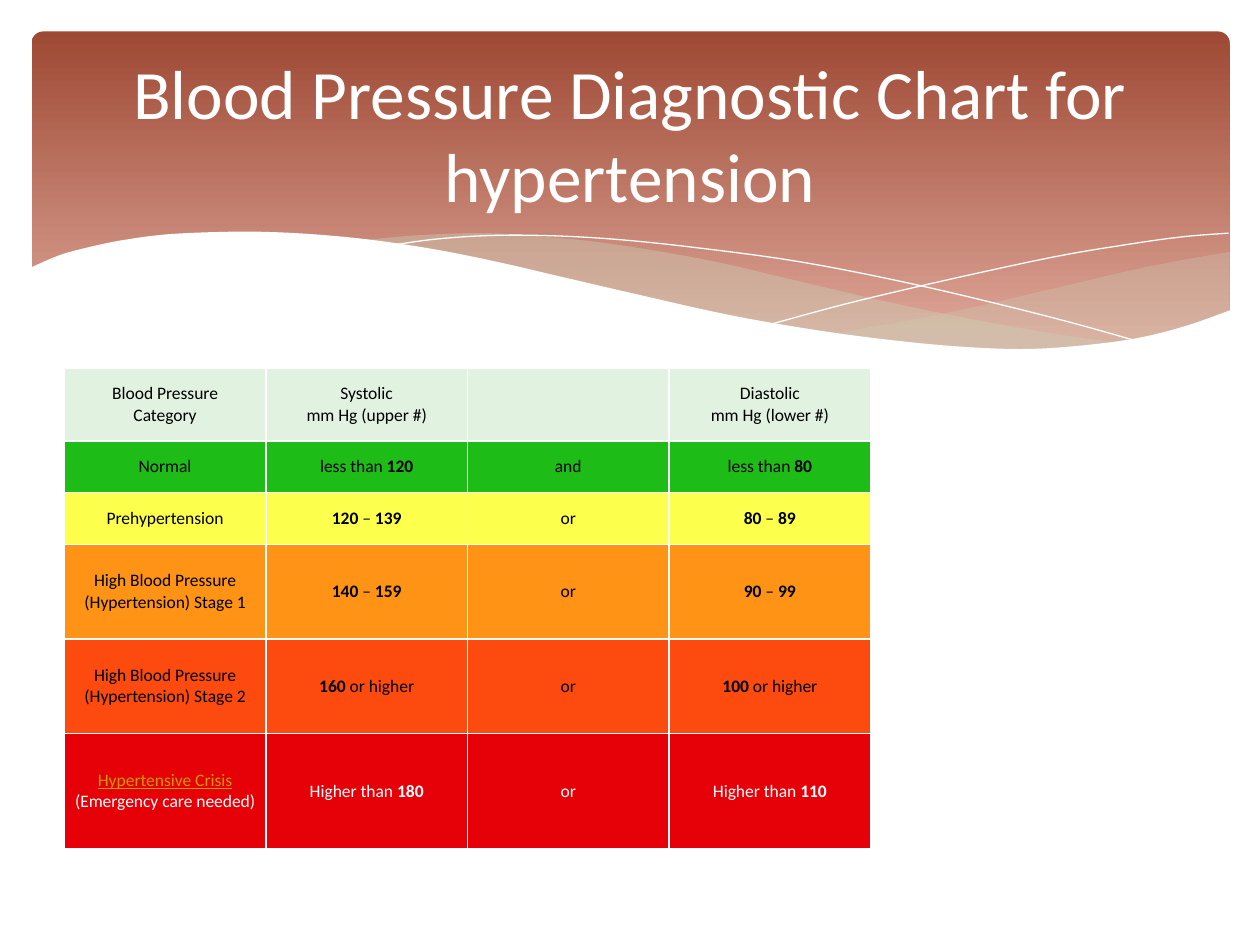
from lxml.etree import SubElement
from pptx import Presentation
from pptx.dml.color import RGBColor
from pptx.enum.shapes import MSO_SHAPE
from pptx.enum.text import MSO_ANCHOR, PP_ALIGN
from pptx.oxml.ns import qn
from pptx.util import Inches, Pt

FONT = "Calibri"
COLUMN_WIDTH = 1.6
ROW_HEIGHTS = [0.58, 0.41, 0.41, 0.75, 0.75, 0.92]
ROW_FILLS = ["E1F2E0", "1EBC16", "FCFF4C", "FF9315", "FD4A0E", "E60008"]
ROW_INKS = ["000000"] * 5 + ["FFFFFF"]
LINK_INK = "CC9900"
READINGS = [
    ["Blood Pressure\nCategory", "Systolic\nmm Hg (upper #)", "", "Diastolic\nmm Hg (lower #)"],
    ["Normal", "less than *120*", "and", "less than *80*"],
    ["Prehypertension", "*120* – *139*", "or", "*80* – *89*"],
    ["High Blood Pressure\n(Hypertension) Stage 1", "*140* – *159*", "or", "*90* – *99*"],
    ["High Blood Pressure\n(Hypertension) Stage 2", "*160* or higher", "or", "*100* or higher"],
    ["_Hypertensive Crisis\n(Emergency care needed)", "Higher than *180*", "or", "Higher than *110*"],
]

RIGHT_RIPPLE = [
    [(9.76, 2), (9.35, 2.07), (8.91, 2.16), (8.32, 2.3), (7.53, 2.48), (6.61, 2.65)],
    [(6.61, 2.65), (7.05, 2.71), (7.57, 2.76), (8.03, 2.78), (8.54, 2.76),
     (8.97, 2.7), (9.35, 2.62), (9.76, 2.47)],
]
LONG_RIPPLE = [
    [(8.93, 2.73), (8.37, 2.65), (7.75, 2.54), (7.06, 2.4), (6.29, 2.22), (5.69, 2.08),
     (5.14, 1.98), (4.65, 1.91), (4.2, 1.87), (3.8, 1.85), (3.28, 1.87), (2.86, 1.91)],
    [(2.86, 1.91), (3.42, 1.99), (4.04, 2.11), (4.49, 2.22), (5.3, 2.4), (6.01, 2.55),
     (6.65, 2.66), (7.22, 2.74), (7.73, 2.77), (8.18, 2.78), (8.57, 2.77), (8.93, 2.73)],
]
FALLING_LINE = [(3.09, 1.95), (3.44, 1.9), (3.87, 1.87), (4.33, 1.87), (4.89, 1.9), (5.56, 1.97),
                (6.36, 2.08), (7.27, 2.26), (8.31, 2.51), (9.07, 2.72)]
RISING_LINE = [(6.13, 2.57), (6.72, 2.41), (7.48, 2.23), (8.36, 2.04),
               (8.95, 1.94), (9.38, 1.88), (9.75, 1.85)]
WHITE_WAVE = [
    [(9.77, 2.46), (9.4, 2.59), (8.99, 2.69), (8.5, 2.75), (8.09, 2.77), (7.61, 2.75),
     (7.08, 2.7), (6.48, 2.62), (5.79, 2.5), (5.03, 2.33), (4.47, 2.2), (3.91, 2.07),
     (3.4, 1.97), (2.92, 1.9), (2.5, 1.86), (2.11, 1.84), (1.77, 1.84), (1.32, 1.86),
     (0.95, 1.91), (0.67, 1.97), (0.46, 2.03), (0.23, 2.13)],
    [(0.23, 3.29), (9.77, 3.29)],
]


def rgb(code):
    """Turn a hex string into a colour."""
    return RGBColor.from_string(code)


def smooth(knots, steps=5):
    """Return points on a Catmull-Rom curve through the knots."""
    if len(knots) < 3:
        return knots
    padded = [knots[0], *knots, knots[-1]]
    points = [knots[0]]
    for a, b, c, d in zip(padded, padded[1:], padded[2:], padded[3:]):
        for step in range(1, steps + 1):
            t = step / steps
            points.append(tuple(
                0.5 * (2 * q + (r - p) * t + (2 * p - 5 * q + 4 * r - s) * t ** 2
                       + (3 * q - p - 3 * r + s) * t ** 3)
                for p, q, r, s in zip(a, b, c, d)))
    return points


def add_outline(slide, curves, closed):
    """Draw one freeform along the given curves."""
    points = [(Inches(x), Inches(y)) for curve in curves for x, y in smooth(curve)]
    builder = slide.shapes.build_freeform(*points[0])
    builder.add_line_segments(points[1:], close=closed)
    outline = builder.convert_to_shape()
    outline.shadow.inherit = False
    return outline


def add_wave(slide, curves, color, opacity=100):
    """Add a filled wave with the given opacity in percent."""
    wave = add_outline(slide, curves, True)
    wave.fill.solid()
    wave.fill.fore_color.rgb = rgb(color)
    wave.line.fill.background()
    if opacity < 100:
        tint = wave.fill._xPr.find(f".//{qn('a:srgbClr')}")
        SubElement(tint, qn("a:alpha"), val=str(opacity * 1000))


def add_hairline(slide, knots):
    """Add a thin white curve."""
    hairline = add_outline(slide, [knots], False)
    hairline.fill.background()
    hairline.line.color.rgb = rgb("FFFFFF")
    hairline.line.width = Pt(0)


def add_banner(slide):
    """Add the rounded gradient band behind the title."""
    banner = slide.shapes.add_shape(
        MSO_SHAPE.ROUNDED_RECTANGLE, Inches(0.25), Inches(0.25), Inches(9.51), Inches(2.7))
    banner.adjustments[0] = 0.034
    banner.shadow.inherit = False
    banner.line.fill.background()
    banner.fill.gradient()
    banner.fill.gradient_angle = 270
    for stop, position, color in zip(banner.fill.gradient_stops, (0, 0.9), ("9E4934", "DDA597")):
        stop.position = position
        stop.color.rgb = rgb(color)


def add_run(paragraph, text, size, color, bold=False, underline=False):
    """Append one styled run."""
    run = paragraph.add_run()
    run.text = text
    run.font.name = FONT
    run.font.size = Pt(size)
    run.font.color.rgb = rgb(color)
    run.font.bold = bold
    run.font.underline = underline


def fill_cell(cell, text, fill, ink):
    """Fill a cell; *stars* mark bold and a leading underscore marks a link line."""
    cell.fill.solid()
    cell.fill.fore_color.rgb = rgb(fill)
    cell.vertical_anchor = MSO_ANCHOR.MIDDLE
    cell.margin_left = cell.margin_right = cell.margin_top = cell.margin_bottom = Inches(0.03)
    paragraph = cell.text_frame.paragraphs[0]
    paragraph.alignment = PP_ALIGN.CENTER
    for number, line in enumerate(text.split("\n")):
        if number:
            paragraph.add_line_break()
        if line.startswith("_"):
            add_run(paragraph, line[1:], 10, LINK_INK, underline=True)
            continue
        for index, part in enumerate(line.split("*")):
            if part:
                add_run(paragraph, part, 10, ink, bold=index % 2 == 1)


def add_readings(slide):
    """Add the blood pressure table."""
    table = slide.shapes.add_table(
        len(READINGS), len(READINGS[0]), Inches(0.51), Inches(2.92),
        Inches(COLUMN_WIDTH * len(READINGS[0])), Inches(sum(ROW_HEIGHTS))).table
    table.first_row = table.horz_banding = False
    for column in table.columns:
        column.width = Inches(COLUMN_WIDTH)
    for row, height, texts, fill, ink in zip(
            table.rows, ROW_HEIGHTS, READINGS, ROW_FILLS, ROW_INKS):
        row.height = Inches(height)
        for cell, text in zip(row.cells, texts):
            fill_cell(cell, text, fill, ink)


def add_title(slide, text):
    """Add the centred white title."""
    frame = slide.shapes.add_textbox(Inches(0.5), Inches(0.37), Inches(9), Inches(1.37)).text_frame
    frame.word_wrap = True
    frame.vertical_anchor = MSO_ANCHOR.MIDDLE
    frame.paragraphs[0].alignment = PP_ALIGN.CENTER
    add_run(frame.paragraphs[0], text, 39.6, "FFFFFF")


def main():
    """Build the slide and save it."""
    deck = Presentation()
    deck.slide_width, deck.slide_height = Inches(10), Inches(7.5)
    slide = deck.slides.add_slide(deck.slide_layouts[6])
    add_banner(slide)
    add_wave(slide, RIGHT_RIPPLE, "CCD1B9", 29)
    add_wave(slide, LONG_RIPPLE, "CCD1B9", 40)
    add_hairline(slide, FALLING_LINE)
    add_hairline(slide, RISING_LINE)
    add_wave(slide, WHITE_WAVE, "FFFFFF")
    add_readings(slide)
    add_title(slide, "Blood Pressure Diagnostic Chart for hypertension")
    deck.save("out.pptx")


if __name__ == "__main__":
    main()
